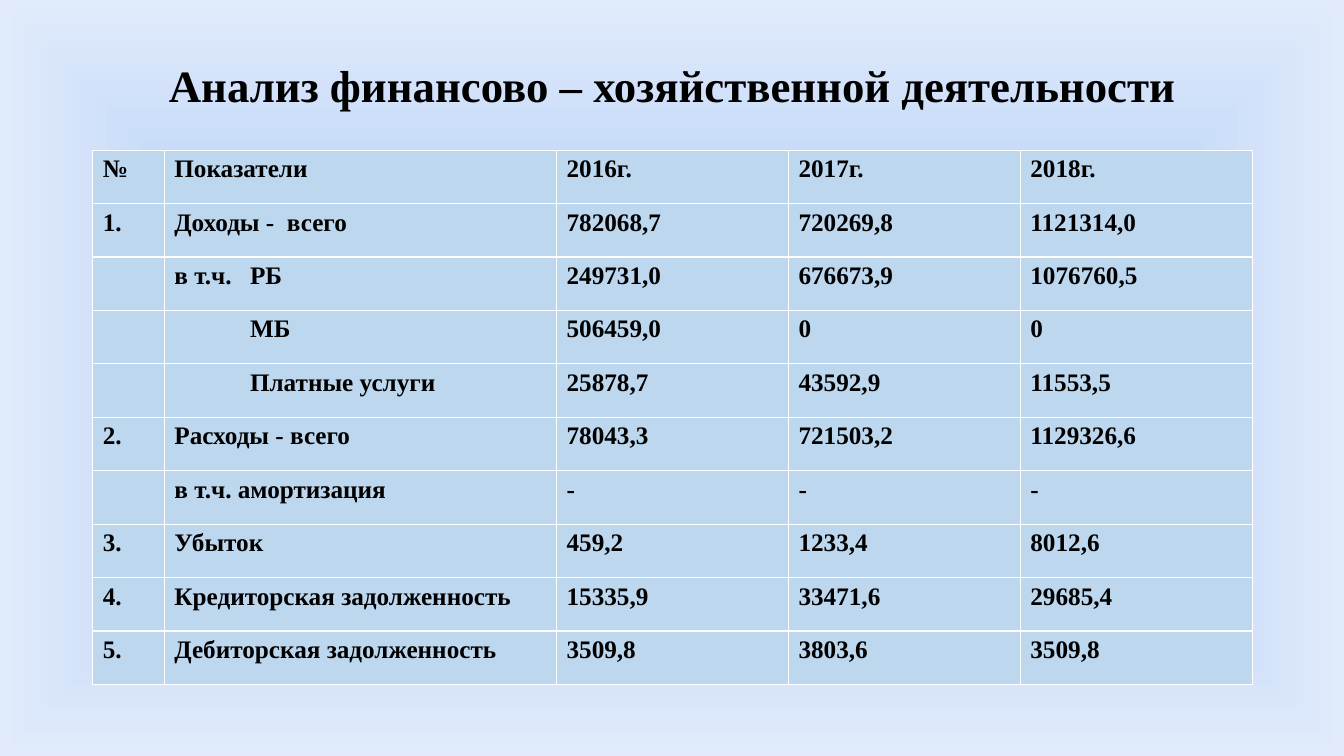
from typing import NamedTuple

from pptx import Presentation
from pptx.dml.color import RGBColor
from pptx.enum.text import MSO_ANCHOR, PP_ALIGN
from pptx.oxml import parse_xml
from pptx.oxml.ns import nsdecls
from pptx.slide import Slide
from pptx.text.text import Font
from pptx.util import Inches, Pt

CENTER = PP_ALIGN.CENTER
MIDDLE = MSO_ANCHOR.MIDDLE
FONT_NAME = "Times New Roman"
BLACK = RGBColor(0x00, 0x00, 0x00)
CELL_BLUE = RGBColor(0xBD, 0xD7, 0xEE)
GRADIENT_STOPS = (
    (0, RGBColor(0x9A, 0xC3, 0xF5)),
    (50, RGBColor(0xC2, 0xD8, 0xF8)),
    (100, RGBColor(0xE1, 0xEB, 0xFB)),
)

LEFT, WIDTH = Inches(0.92), Inches(11.5)
COLUMN_WIDTHS = (0.71, 3.89, 2.3, 2.3, 2.3)
ROW_HEIGHT = 0.53
SOURCE_INDENT = Inches(0.75)


class Indicator(NamedTuple):
    number: str
    name: str
    values: tuple[str, str, str]
    indented: bool = False


INDICATORS = (
    Indicator("№", "Показатели", ("2016г.", "2017г.", "2018г.")),
    Indicator("1.", "Доходы -  всего", ("782068,7", "720269,8", "1121314,0")),
    Indicator("", "в т.ч.\tРБ", ("249731,0", "676673,9", "1076760,5")),
    Indicator("", "МБ", ("506459,0", "0", "0"), indented=True),
    Indicator("", "Платные услуги", ("25878,7", "43592,9", "11553,5"), indented=True),
    Indicator("2.", "Расходы - всего", ("78043,3", "721503,2", "1129326,6")),
    Indicator("", "в т.ч. амортизация", ("-", "-", "-")),
    Indicator("3.", "Убыток", ("459,2", "1233,4", "8012,6")),
    Indicator("4.", "Кредиторская задолженность", ("15335,9", "33471,6", "29685,4")),
    Indicator("5.", "Дебиторская задолженность", ("3509,8", "3803,6", "3509,8")),
)


def set_background(slide: Slide) -> None:
    """Fill the slide with a gradient running from its centre to its edges."""
    stops = "".join(
        f'<a:gs pos="{percent * 1000}"><a:srgbClr val="{color}"/></a:gs>'
        for percent, color in GRADIENT_STOPS
    )
    background = parse_xml(
        f'<p:bg {nsdecls("p", "a")}><p:bgPr><a:gradFill rotWithShape="1">'
        f'<a:gsLst>{stops}</a:gsLst><a:path path="shape">'
        '<a:fillToRect l="50000" t="50000" r="50000" b="50000"/></a:path>'
        "</a:gradFill><a:effectLst/></p:bgPr></p:bg>"
    )
    slide.element.cSld.insert(0, background)


def format_font(font: Font, size: int) -> None:
    font.name = FONT_NAME
    font.size = Pt(size)
    font.bold = True
    font.color.rgb = BLACK


def add_title(slide: Slide) -> None:
    title = slide.shapes.title
    title.left, title.top = LEFT, Inches(0.4)
    title.width, title.height = WIDTH, Inches(0.95)
    title.text_frame.text = "Анализ финансово – хозяйственной деятельности"
    title.text_frame.vertical_anchor = MIDDLE
    paragraph = title.text_frame.paragraphs[0]
    paragraph.alignment = CENTER
    paragraph.line_spacing = 0.9
    format_font(paragraph.runs[0].font, 32)


def add_indicator_table(slide: Slide) -> None:
    row_count = len(INDICATORS)
    table = slide.shapes.add_table(
        row_count, len(COLUMN_WIDTHS), LEFT, Inches(1.49),
        WIDTH, Inches(ROW_HEIGHT * row_count),
    ).table
    for column, width in zip(table.columns, COLUMN_WIDTHS):
        column.width = Inches(width)
    for row, indicator in zip(table.rows, INDICATORS):
        row.height = Inches(ROW_HEIGHT)
        texts = (indicator.number, indicator.name, *indicator.values)
        for cell, text in zip(row.cells, texts):
            cell.fill.solid()
            cell.fill.fore_color.rgb = CELL_BLUE
            cell.text_frame.text = text
            for run in cell.text_frame.paragraphs[0].runs:
                format_font(run.font, 18)
        set_name_indent(row.cells[1].text_frame.paragraphs[0], indicator.indented)


def set_name_indent(paragraph, indented: bool) -> None:
    """Align the funding sources by a left margin or by a tab stop."""
    properties = paragraph._p.get_or_add_pPr()
    if indented:
        properties.set("marL", str(SOURCE_INDENT))
    elif "\t" in paragraph.text:
        properties.append(parse_xml(
            f'<a:tabLst {nsdecls("a")}><a:tab pos="{SOURCE_INDENT}" algn="l"/></a:tabLst>'
        ))


def main() -> None:
    presentation = Presentation()
    presentation.slide_width = Inches(13.33)
    presentation.slide_height = Inches(7.5)
    slide = presentation.slides.add_slide(presentation.slide_layouts[5])
    set_background(slide)
    add_title(slide)
    add_indicator_table(slide)
    presentation.save("out.pptx")


if __name__ == "__main__":
    main()
